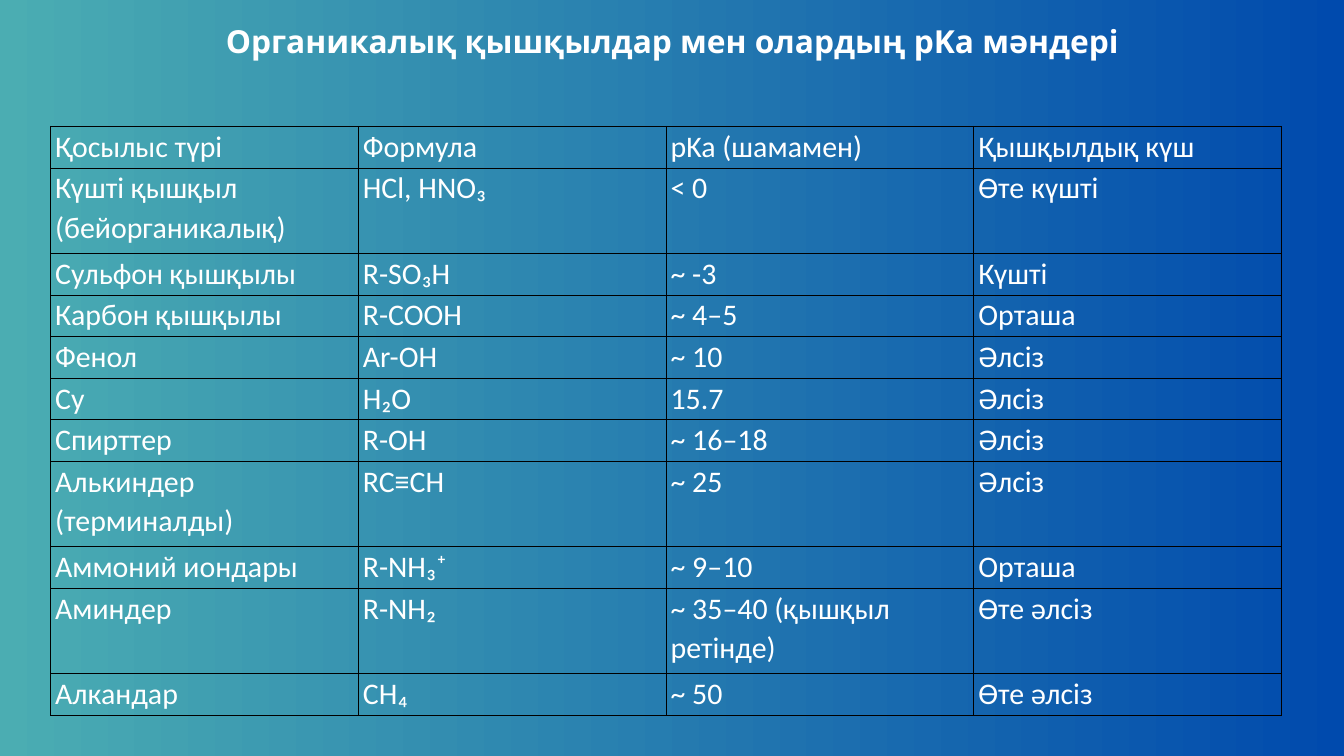
from lxml import etree
from pptx import Presentation
from pptx.dml.color import RGBColor
from pptx.enum import text
from pptx.oxml import ns
from pptx.util import Inches, Pt

WHITE = "FFFFFF"
COL_WIDTH = 4.58
LINE_ROW, TALL_ROW = 0.62, 1.27
TALL = {1, 7, 9}  # rows whose text wraps to two lines
ACIDS = [
    ("Қосылыс түрі", "Формула", "pKa (шамамен)", "Қышқылдық күш"),
    ("Күшті қышқыл (бейорганикалық)", "HCl, HNO₃", "< 0", "Өте күшті"),
    ("Сульфон қышқылы", "R-SO₃H", "~ -3", "Күшті"),
    ("Карбон қышқылы", "R-COOH", "~ 4–5", "Орташа"),
    ("Фенол", "Ar-OH", "~ 10", "Әлсіз"),
    ("Су", "H₂O", "15.7", "Әлсіз"),
    ("Спирттер", "R-OH", "~ 16–18", "Әлсіз"),
    ("Алькиндер (терминалды)", "RC≡CH", "~ 25", "Әлсіз"),
    ("Аммоний иондары", "R-NH₃⁺", "~ 9–10", "Орташа"),
    ("Аминдер", "R-NH₂", "~ 35–40 (қышқыл ретінде)", "Өте әлсіз"),
    ("Алкандар", "CH₄", "~ 50", "Өте әлсіз"),
]


def color(code):
    return RGBColor.from_string(code)


def style(para, font, size, spacing, bold=False):
    para.line_spacing = spacing
    for run in para.runs:
        run.font.name = font
        run.font.size = Pt(size)
        run.font.bold = bold
        run.font.color.rgb = color(WHITE)


def paint(slide, start, end):
    """Fill the background with a left-to-right gradient."""
    fill = slide.background.fill
    fill.gradient()
    fill.gradient_angle = 0
    for stop, code, place in zip(fill.gradient_stops, (start, end), (0, 1)):
        stop.color.rgb = color(code)
        stop.position = place


def add_title(slide, words):
    box = slide.shapes.add_textbox(Inches(3.35), Inches(0.23), Inches(13.31), Inches(0.63))
    frame = box.text_frame
    frame.margin_left = frame.margin_right = frame.margin_top = frame.margin_bottom = 0
    frame.word_wrap = True
    frame.auto_size = text.MSO_AUTO_SIZE.SHAPE_TO_FIT_TEXT
    frame.text = words
    para = frame.paragraphs[0]
    para.alignment = text.PP_ALIGN.CENTER
    style(para, "Open Sans", 34, Pt(47.6), bold=True)


def add_border(cell, code, width):
    props = cell._tc.get_or_add_tcPr()
    for side in ("a:lnL", "a:lnR", "a:lnT", "a:lnB"):
        line = etree.SubElement(props, ns.qn(side), w=str(Pt(width)))
        solid = etree.SubElement(line, ns.qn("a:solidFill"))
        etree.SubElement(solid, ns.qn("a:srgbClr"), val=code)


def fill_cell(cell, words):
    cell.margin_left = cell.margin_right = Inches(0.07)
    cell.margin_top = cell.margin_bottom = 0
    add_border(cell, "000000", 1)
    cell.fill.background()
    cell.text_frame.text = words
    style(cell.text_frame.paragraphs[0], "Calibri", 32, 1.07)


def add_grid(slide, data):
    heights = [TALL_ROW if i in TALL else LINE_ROW for i in range(len(data))]
    count = len(data[0])
    table = slide.shapes.add_table(
        len(data), count, Inches(0.75), Inches(1.88),
        Inches(COL_WIDTH * count), Inches(sum(heights))).table
    table.first_row = table.horz_banding = False
    for col in table.columns:
        col.width = Inches(COL_WIDTH)
    for row, height, values in zip(table.rows, heights, data):
        row.height = Inches(height)
        for cell, words in zip(row.cells, values):
            fill_cell(cell, words)


def main():
    deck = Presentation()
    deck.slide_width, deck.slide_height = Inches(20), Inches(11.25)
    slide = deck.slides.add_slide(deck.slide_layouts[6])
    paint(slide, "4BADB2", "004AAD")
    add_title(slide, "Органикалық қышқылдар мен олардың pKa мәндері")
    add_grid(slide, ACIDS)
    deck.save("out.pptx")


if __name__ == "__main__":
    main()
